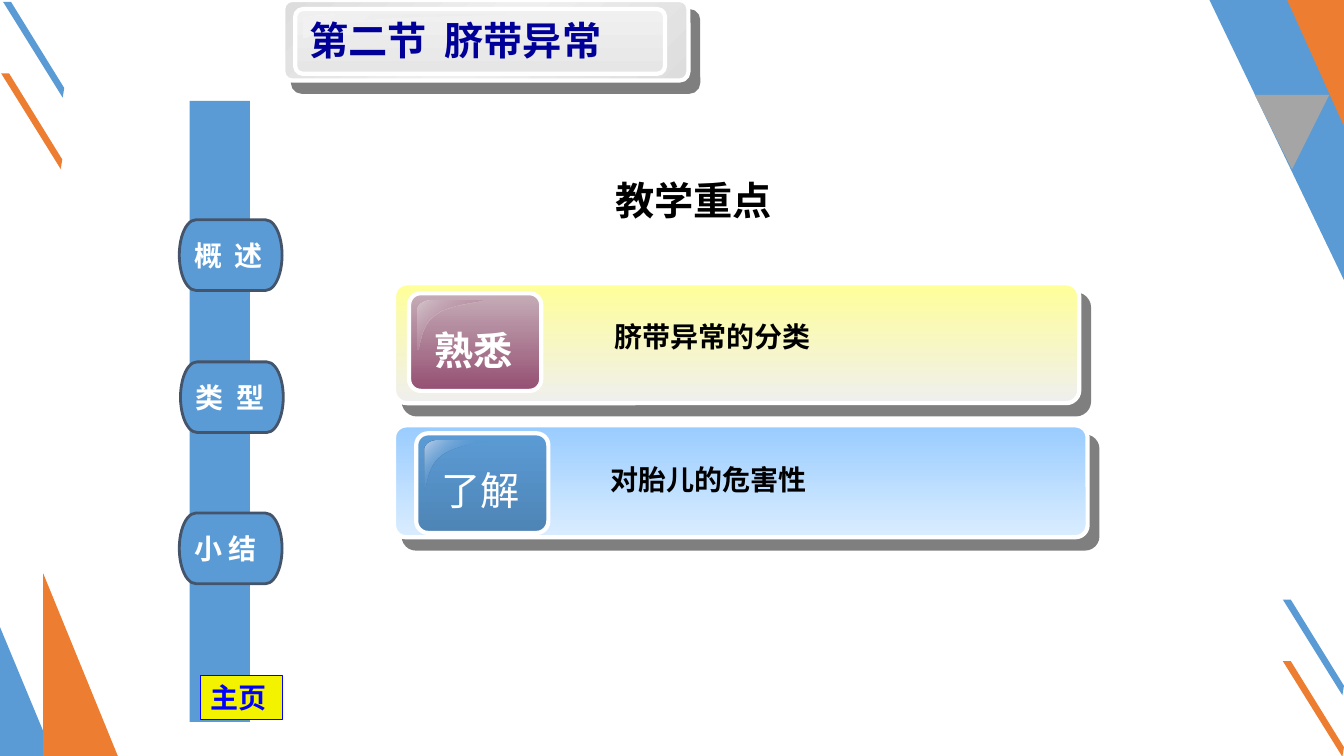
import pptx
import pptx.dml.color
import pptx.enum.shapes
import pptx.enum.text
import pptx.oxml
import pptx.oxml.ns
import pptx.util

Cm = pptx.util.Cm
Pt = pptx.util.Pt
KIND = pptx.enum.shapes.MSO_SHAPE
ANCHOR = pptx.enum.text.MSO_ANCHOR
ALIGN = pptx.enum.text.PP_ALIGN

# All lengths in centimetres; gradient stops are (position, colour, opacity).
BLUE, ORANGE, GREY, WHITE, BLACK = "5B9BD5", "ED7D31", "A5A5A5", "FFFFFF", "000000"
HAN = "Noto Sans CJK SC"

STRIPE = [(0, 0), (0.2, 0), (1.54, 2.17), (1.5, 2.41)]
STRIPES = [(32.33, 15.11, BLUE), (0.03, 1.85, ORANGE),
           (0.08, 0.05, BLUE), (32.33, 16.66, ORANGE)]
CORNER = [([(30.48, 0), (33.87, 0), (33.87, 7.06)], BLUE),
          ([(32.44, 0), (33.87, 0), (33.87, 3.18)], ORANGE),
          ([(33.5, 2.39), (32.56, 4.27), (31.62, 2.39)], GREY)]
PEAKS = [((0, 15.8, 1.35, 3.25), BLUE), ((1.09, 14.45, 1.88, 4.6), ORANGE)]

BAR = (4.78, 2.54, 1.52, 15.65)
MENU = [("概  述", 4.52, 5.54), ("类  型", 4.55, 9.12), ("小 结", 4.52, 12.93)]
MENU_SIZE = (2.59, 1.78)
HOME = ("主页", (5.05, 17.02, 2.06, 1.12))

TITLE = "第二节  脐带异常"
HEADING = "教学重点"
CARDS = [
    dict(label="熟悉", bold=True, text="脐带异常的分类", font="Times New Roman",
         plate=(9.93, 7.14, 17.27, 3.02), badge=(10.31, 7.39, 3.33, 2.46),
         body=(14.12, 7.92, 12.7, 1.12),
         plate_fill=[(0, "FFFF99", 100), (100, "EFEFEF", 100)],
         badge_fill=[(0, "C5ADB7", 100), (100, "954F72", 100)],
         gloss_fill=[(0, "D4C4CB", 100), (100, "954F72", 0)]),
    dict(label="了解", bold=False, text="对胎儿的危害性", font=HAN,
         plate=(9.93, 10.72, 17.48, 2.82), badge=(10.49, 10.92, 3.33, 2.51),
         body=(14.02, 11.53, 16.03, 1.12),
         plate_fill=[(0, "99CCFF", 100), (100, "DAEDFF", 100)],
         badge_fill=[(0, BLUE, 100), (100, "4E85B6", 100)],
         gloss_fill=[(0, "BED0E9", 100), (50, BLUE, 0), (100, "BED0E9", 100)]),
]
BODY_INDENT = 1.37

# Highlight outline in fractions of its width and height: cubic curves.
GLOSS_CURVES = [
    [(0.2, 0), (0.09, 0), (0, 0.09), (0, 0.2)],
    [(0, 1), (0.05, 1), (0.02, 0.52), (0.28, 0.29)],
    [(0.28, 0.29), (0.52, 0.07), (1, 0.04), (1, 0)],
]

deck = pptx.Presentation()
deck.slide_width, deck.slide_height = Cm(33.87), Cm(19.05)
page = deck.slides.add_slide(deck.slide_layouts[6])


def color(value):
    return pptx.dml.color.RGBColor.from_string(value)


def element(markup):
    return pptx.oxml.parse_xml(markup.replace(
        ">", " " + pptx.oxml.ns.nsdecls("a") + ">", 1))


def paint(shape, fill, angle=90, line=None, width=0):
    """Fill with a colour or a list of stops running clockwise at angle."""
    shape.shadow.inherit = False
    if isinstance(fill, str):
        shape.fill.solid()
        shape.fill.fore_color.rgb = color(fill)
    else:
        shape.fill.gradient()
        shape.fill.gradient_angle = 360 - angle
        stops = shape._element.spPr.find(".//" + pptx.oxml.ns.qn("a:gsLst"))
        for stop in list(stops):
            stops.remove(stop)
        for position, value, opacity in fill:
            stops.append(element(
                f'<a:gs pos="{position * 1000}"><a:srgbClr val="{value}">'
                f'<a:alpha val="{opacity * 1000}"/></a:srgbClr></a:gs>'))
    if line:
        shape.line.color.rgb = color(line)
        shape.line.width = Pt(width)
    else:
        shape.line.fill.background()


def add_shape(kind, box, fill, adjust=None, **style):
    shape = page.shapes.add_shape(kind, *map(Cm, box))
    if adjust is not None:
        shape.adjustments[0] = adjust
    paint(shape, fill, **style)
    return shape


def add_outline(points, fill, **style):
    corners = [(Cm(x), Cm(y)) for x, y in points]
    builder = page.shapes.build_freeform(*corners[0], scale=1.0)
    builder.add_line_segments(corners[1:], close=True)
    paint(builder.convert_to_shape(), fill, **style)


def add_plate(box, fill, angle):
    """Rounded panel with a hard half-transparent shadow."""
    plate = add_shape(KIND.ROUNDED_RECTANGLE, box, fill, 0.109,
                      angle=angle, line=WHITE, width=3)
    effects = plate._element.spPr.find(pptx.oxml.ns.qn("a:effectLst"))
    effects.append(element(
        f'<a:outerShdw blurRad="0" dist="{Pt(10.6)}" dir="{49 * 60000}" '
        'algn="ctr" rotWithShape="0"><a:srgbClr val="000000">'
        '<a:alpha val="50000"/></a:srgbClr></a:outerShdw>'))


def add_gloss(left, top, width, height, fill, steps=12):
    points = []
    for curve in GLOSS_CURVES:
        for step in range(steps + 1):
            t = step / steps
            weights = ((1 - t) ** 3, 3 * t * (1 - t) ** 2, 3 * t * t * (1 - t), t ** 3)
            x, y = (sum(w * p[axis] for w, p in zip(weights, curve)) for axis in (0, 1))
            points.append((left + x * width, top + y * height))
    add_outline(points, fill, angle=45)


def write(shape, text, size, ink, font="Arial", bold=True, wrap=True,
          anchor=ANCHOR.TOP, align=ALIGN.LEFT, insets=(0.25, 0.13)):
    frame = shape.text_frame
    frame.text = text
    frame.word_wrap = wrap
    frame.vertical_anchor = anchor
    frame.margin_left, frame.margin_top = map(Cm, insets)
    frame.margin_right, frame.margin_bottom = Cm(0.25), Cm(insets[1])
    para = frame.paragraphs[0]
    para.alignment = align
    span = para.runs[0]
    span.font.size, span.font.bold, span.font.name = Pt(size), bold, font
    span.font.color.rgb = color(ink)
    span._r.get_or_add_rPr().append(element(f'<a:ea typeface="{HAN}"></a:ea>'))


def add_text(box, *args, **style):
    write(page.shapes.add_textbox(*map(Cm, box)), *args, **style)


# Page decoration
for left, top, fill in STRIPES:
    add_outline([(left + x, top + y) for x, y in STRIPE], fill)
for points, fill in CORNER:
    add_outline(points, fill)
for box, fill in PEAKS:
    add_shape(KIND.ISOSCELES_TRIANGLE, box, fill, 0)

# Side menu
add_shape(KIND.RECTANGLE, BAR, BLUE)
for text, left, top in MENU:
    button = add_shape(KIND.FLOWCHART_TERMINATOR, (left, top, *MENU_SIZE), BLUE,
                       line="44546A", width=2)
    write(button, text, 20, WHITE, anchor=ANCHOR.MIDDLE)
home_text, home_box = HOME
home = add_shape(KIND.RECTANGLE, home_box, "F3F300", line="0000FF", width=0.75)
write(home, home_text, 20, "0000FF")

# Title and heading
add_plate((7.14, 0, 10.21, 2.03),
          [(0, "DDDDDD", 100), (50, "EFEFEF", 100), (100, "DDDDDD", 100)], 45)
add_shape(KIND.ROUNDED_RECTANGLE, (7.44, 0.23, 9.32, 1.63),
          [(0, "F0F0F0", 100), (100, "E7E6E6", 100)], 0.119, line=WHITE, width=3)
add_gloss(7.65, 0.36, 5.28, 0.58, [(0, "F4F3F3", 100), (100, "E7E6E6", 0)])
add_text((7.52, 0.25, 9.04, 1.47), TITLE, 28, "000099", HAN, insets=(0.28, 0.15))
add_text((8.13, 3.73, 18.69, 2.59), HEADING, 28, BLACK, HAN,
         anchor=ANCHOR.MIDDLE, align=ALIGN.CENTER)

# Teaching points
for card in CARDS:
    left, top = card["badge"][:2]
    add_plate(card["plate"], card["plate_fill"], 90)
    add_shape(KIND.ROUNDED_RECTANGLE, card["badge"], card["badge_fill"], 0.119,
              line=WHITE, width=3)
    add_gloss(left + 0.2, top + 0.18, 1.65, 1.24, card["gloss_fill"])
    add_text((left + 0.38, top + 0.7, 2.49, 1.45), card["label"], 28, WHITE,
             bold=card["bold"], wrap=False)
    add_text(card["body"], card["text"], 20, BLACK, card["font"],
             insets=(BODY_INDENT, 0.13))

deck.save("out.pptx")
